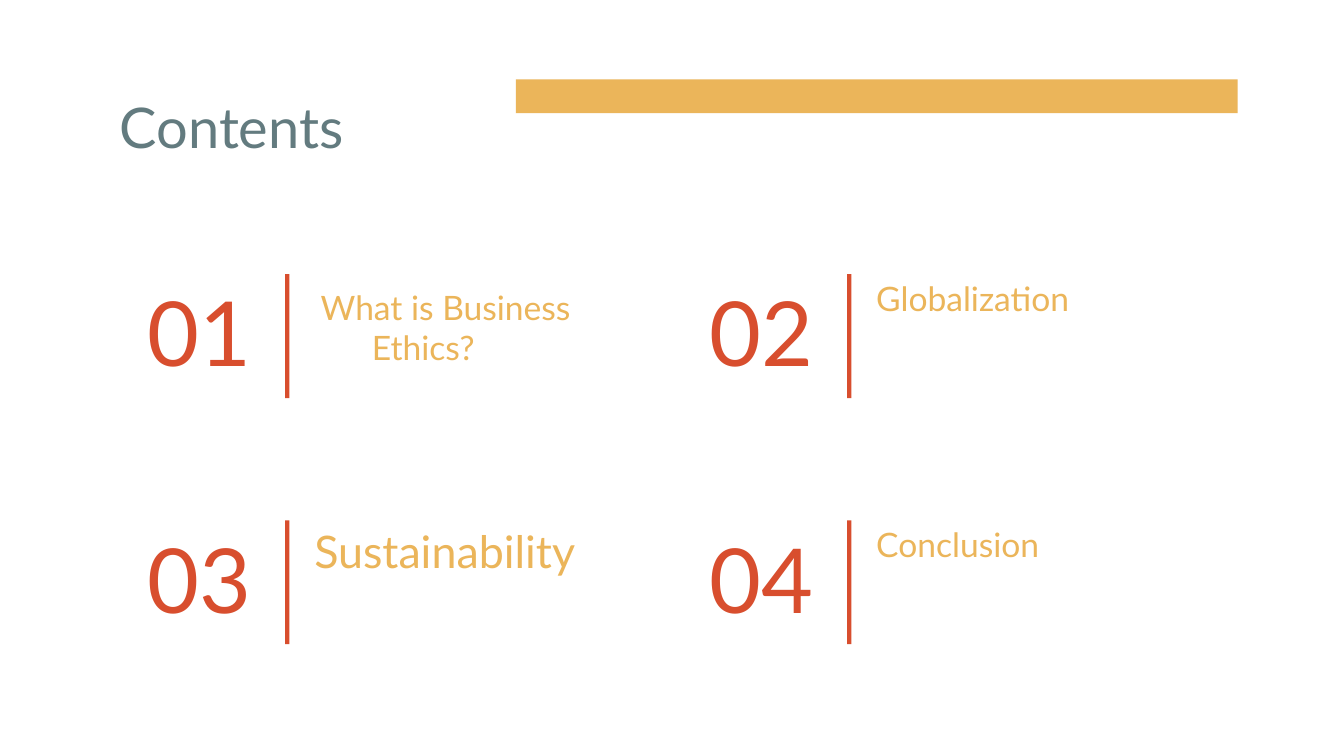
from dataclasses import dataclass

from lxml import etree
from pptx import Presentation, util as u
from pptx.dml.color import RGBColor
from pptx.enum import shapes, text
from pptx.oxml.ns import qn

GOLD = RGBColor(0xEB, 0xB5, 0x5A)
RED = RGBColor(0xD8, 0x4E, 0x2E)
SLATE = RGBColor(0x63, 0x7B, 0x7F)
FONT = "Lato"

LEFT, TOP = 2.44, 5.18
STEP_X, STEP_Y = 10.62, 4.65
HIGH = 2.34


@dataclass
class Box:
    left: float
    top: float
    width: float
    height: float


@dataclass
class Topic:
    name: str
    col: int
    row: int
    size: int = 18
    after: int = 16
    margin: float = 0
    indent: float = 0
    shift: float = 0


TOPICS = [
    Topic("What is Business Ethics?", 0, 0, after=0,
          margin=1.27, indent=-0.97, shift=0.18),
    Topic("Globalization", 1, 0),
    Topic("Sustainability", 0, 1, size=24),
    Topic("Conclusion", 1, 1),
]


def place(shape, box: Box) -> None:
    shape.left, shape.top = u.Cm(box.left), u.Cm(box.top)
    shape.width, shape.height = u.Cm(box.width), u.Cm(box.height)


def write(shape, words: str, size: int, color: RGBColor,
          align=text.PP_ALIGN.LEFT, anchor=text.MSO_ANCHOR.TOP):
    """Fill the shape with one styled paragraph and return it."""
    frame = shape.text_frame
    frame.word_wrap = True
    frame.auto_size = text.MSO_AUTO_SIZE.NONE
    frame.vertical_anchor = anchor
    frame.margin_left = frame.margin_right = u.Cm(0.25)
    frame.margin_top = frame.margin_bottom = u.Cm(0.25)
    para = frame.paragraphs[0]
    para.alignment = align
    para.space_before = u.Pt(0)
    run = para.add_run()
    run.text = words
    font = run.font
    font.name, font.size, font.bold = FONT, u.Pt(size), False
    font.color.rgb = color
    return para


def add_bar(slide, box: Box, color: RGBColor) -> None:
    bar = slide.shapes.add_shape(
        shapes.MSO_SHAPE.RECTANGLE, u.Cm(box.left), u.Cm(box.top),
        u.Cm(box.width), u.Cm(box.height))
    bar.shadow.inherit = False
    bar.fill.solid()
    bar.fill.fore_color.rgb = color
    bar.line.fill.background()


def add_topic(slide, label, number: int, topic: Topic) -> None:
    left = LEFT + topic.col * STEP_X
    top = TOP + topic.row * STEP_Y

    digits = slide.shapes.add_textbox(0, 0, 0, 0)
    place(digits, Box(left, top, 2.57, HIGH))
    write(digits, f"{number:02}", 48, RED,
          text.PP_ALIGN.RIGHT, text.MSO_ANCHOR.BOTTOM)
    add_bar(slide, Box(left + 2.95, top, 0.08, HIGH), RED)

    place(label, Box(left + 3.25 - topic.shift, top - 0.19 + topic.shift,
                     7.01, 0.94))
    para = write(label, topic.name, topic.size, GOLD)
    para.space_after = u.Pt(topic.after)
    props = para._p.get_or_add_pPr()
    props.set("marL", str(u.Cm(topic.margin)))
    props.set("indent", str(u.Cm(topic.indent)))
    etree.SubElement(props, qn("a:buNone"))


def main() -> None:
    deck = Presentation()
    deck.slide_width, deck.slide_height = u.Cm(25.4), u.Cm(14.28)
    layout = deck.slide_layouts.get_by_name("Comparison")
    slide = deck.slides.add_slide(layout)
    title, *labels = slide.placeholders

    add_bar(slide, Box(9.75, 1.5, 13.64, 0.64), GOLD)
    place(title, Box(2.01, 1.5, 8.31, 1.6))
    write(title, "Contents", 30, SLATE)
    for number, (label, topic) in enumerate(zip(labels, TOPICS), 1):
        add_topic(slide, label, number, topic)

    deck.save("out.pptx")


if __name__ == "__main__":
    main()
